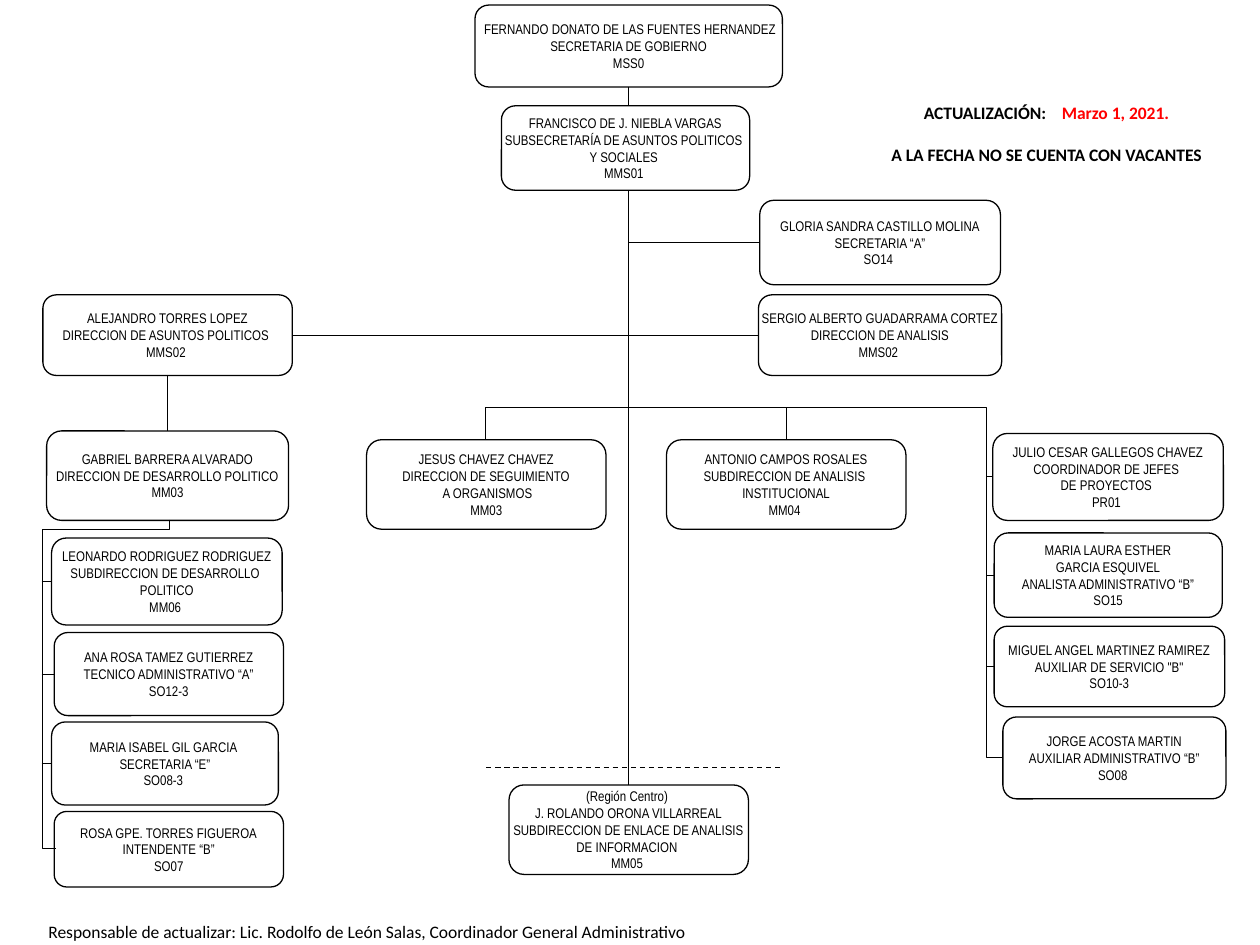
from lxml.etree import SubElement
from pptx import Presentation
from pptx.dml.color import RGBColor
from pptx.enum.dml import MSO_LINE
from pptx.enum.shapes import MSO_CONNECTOR, MSO_SHAPE
from pptx.enum.text import MSO_ANCHOR, PP_ALIGN
from pptx.oxml.ns import qn
from pptx.util import Inches, Pt

BLACK, WHITE, RED = "000000", "FFFFFF", "FF0000"
TOP, LEFT, BOTTOM, RIGHT = range(4)
ROUND, ALTERNATE = MSO_SHAPE.ROUNDED_RECTANGLE, MSO_SHAPE.FLOWCHART_ALTERNATE_PROCESS

# Posts: key, (left, top, width, height), lines of text
POSTS = [
    ("secretaria", (3.77, 0.04, 2.44, 0.65),
     [" FERNANDO DONATO DE LAS FUENTES HERNANDEZ", "SECRETARIA DE GOBIERNO", "MSS0"]),
    ("subsecretaria", (3.98, 0.84, 1.97, 0.67),
     ["FRANCISCO DE J. NIEBLA VARGAS", "SUBSECRETARÍA DE ASUNTOS POLITICOS ",
      "Y SOCIALES ", "MMS01 "]),
    ("gloria", (6.03, 1.59, 1.91, 0.67),
     ["GLORIA SANDRA CASTILLO MOLINA", "SECRETARIA “A”", "SO14 "]),
    ("politicos", (0.34, 2.34, 1.98, 0.64),
     ["ALEJANDRO TORRES LOPEZ", "DIRECCION DE ASUNTOS POLITICOS ", "MMS02 "]),
    ("analisis", (6.02, 2.34, 1.93, 0.64),
     ["SERGIO ALBERTO GUADARRAMA CORTEZ", "DIRECCION DE ANALISIS", "MMS02 "]),
    ("desarrollo", (0.37, 3.42, 1.92, 0.71),
     ["GABRIEL BARRERA ALVARADO", "DIRECCION DE DESARROLLO POLITICO", "MM03"]),
    ("leonardo", (0.41, 4.27, 1.83, 0.69),
     ["LEONARDO RODRIGUEZ RODRIGUEZ", "SUBDIRECCION DE DESARROLLO ", "POLITICO", "MM06 "]),
    ("ana", (0.43, 5.02, 1.82, 0.66),
     ["ANA ROSA TAMEZ GUTIERREZ", "TECNICO ADMINISTRATIVO “A”", "SO12-3"]),
    ("isabel", (0.41, 5.73, 1.8, 0.66),
     ["MARIA ISABEL GIL GARCIA ", "SECRETARIA “E”", "SO08-3 "]),
    ("rosa", (0.43, 6.44, 1.82, 0.6),
     ["ROSA GPE. TORRES FIGUEROA", "INTENDENTE “B”", "SO07"]),
    ("seguimiento", (2.91, 3.49, 1.9, 0.71),
     ["JESUS CHAVEZ CHAVEZ", "DIRECCION DE SEGUIMIENTO", " A ORGANISMOS", "MM03"]),
    ("institucional", (5.29, 3.49, 1.9, 0.71),
     ["ANTONIO CAMPOS ROSALES", "SUBDIRECCION DE ANALISIS ", "INSTITUCIONAL", "MM04 "]),
    ("julio", (7.88, 3.44, 1.83, 0.69),
     ["JULIO CESAR GALLEGOS CHAVEZ", "COORDINADOR DE JEFES ", "DE PROYECTOS ", "PR01 "]),
    ("laura", (7.89, 4.23, 1.81, 0.67),
     ["MARIA LAURA ESTHER", "GARCIA ESQUIVEL", "ANALISTA ADMINISTRATIVO “B”", "SO15"]),
    ("miguel", (7.89, 4.97, 1.83, 0.64),
     ["MIGUEL ANGEL MARTINEZ RAMIREZ", "AUXILIAR DE SERVICIO \"B\"", "SO10-3"]),
    ("jorge", (7.96, 5.69, 1.77, 0.65),
     ["JORGE ACOSTA MARTIN", "AUXILIAR ADMINISTRATIVO “B”", "SO08 "]),
    ("enlace", (4.04, 6.23, 1.9, 0.71),
     ["(Región Centro) ", "J. ROLANDO ORONA VILLARREAL",
      "SUBDIRECCION DE ENLACE DE ANALISIS", "DE INFORMACION ", "MM05 "]),
]
ALTERNATES = {"institucional", "jorge"}

# Lines from a rail to the middle of a post's left side: rail x, posts
TRUNK_X = 4.99
RAILS = [(TRUNK_X, ["gloria"]),
         (0.33, ["leonardo", "ana", "isabel"]),
         (7.83, ["julio", "laura", "miguel"])]

# Elbow rails: (left, top, width, height), rotation, flipped, bends
ELBOWS = [((-0.41, 4.98, 2.61, 0.9), 90, False, (0.028, 1.122)),
          ((4.64, 2.7, 2.53, 4.1), 270, True, (-0.099, 0.97))]

# Notes: (left, top, width, height), paragraphs of (text, colour, bold, letter spacing)
NOTES = [
    ((6.59, 0.76, 3.43, 0.61),
     [[("ACTUALIZACIÓN:", BLACK, True, 0), (" ", BLACK, True, 6.75),
       ("Marzo 1, 2021.", RED, True, 0)],
      [("A LA FECHA NO SE CUENTA CON VACANTES", BLACK, True, 0)]]),
    ((-0.2, 7.26, 6.22, 0.27),
     [[("Responsable de actualizar: Lic. Rodolfo de León Salas, "
        "Coordinador General Administrativo", BLACK, False, 0)]]),
]


def rgb(color):
    return RGBColor.from_string(color)


def add_run(p, text, color=BLACK, **font):
    r = p.add_run()
    r.text = text
    r.font.color.rgb = rgb(color)
    for name, value in font.items():
        setattr(r.font, name, value)
    return r


def paragraphs(tf, count):
    for i in range(count):
        p = tf.add_paragraph() if i else tf.paragraphs[0]
        p.alignment = PP_ALIGN.CENTER
        yield p


def add_post(s, kind, box, lines):
    sp = s.shapes.add_shape(kind, *map(Inches, box))
    sp.shadow.inherit = False
    sp.fill.solid()
    sp.fill.fore_color.rgb = rgb(WHITE)
    sp.line.color.rgb = rgb(BLACK)
    sp.line.width = Pt(0.75)
    tf = sp.text_frame
    tf.word_wrap = False
    tf.vertical_anchor = MSO_ANCHOR.MIDDLE
    for p, text in zip(paragraphs(tf, len(lines)), lines):
        add_run(p, text, name="Arial Narrow", size=Pt(8))
    return sp


def add_line(s, start, end, kind=MSO_CONNECTOR.STRAIGHT, width=0.5):
    c = s.shapes.add_connector(kind, *map(Inches, start + end))
    c.line.color.rgb = rgb(BLACK)
    c.line.width = Pt(width)
    SubElement(c.element.spPr, qn("a:effectLst"))
    return c


def join(s, first, side1, second, side2):
    c = add_line(s, (0, 0), (1, 1))
    c.begin_connect(first, side1)
    c.end_connect(second, side2)


def add_elbow(s, box, rotation, flipped, bends):
    x, y, w, h = box
    c = add_line(s, (x, y), (x + w, y + h), MSO_CONNECTOR.ELBOW)
    xfrm = c.element.spPr.find(qn("a:xfrm"))
    xfrm.set("rot", str(rotation * 60000))
    if flipped:
        xfrm.set("flipH", "1")
    geom = c.element.spPr.find(qn("a:prstGeom"))
    geom.set("prst", "bentConnector4")
    guides = geom.find(qn("a:avLst"))
    for i, bend in enumerate(bends, 1):
        SubElement(guides, qn("a:gd"), name=f"adj{i}", fmla=f"val {round(bend * 100000)}")


def main():
    prs = Presentation()
    prs.slide_width, prs.slide_height = Inches(10), Inches(7.5)
    s = prs.slides.add_slide(prs.slide_layouts[6])

    # Posts
    boxes = {key: box for key, box, _ in POSTS}
    posts = {key: add_post(s, ALTERNATE if key in ALTERNATES else ROUND, box, lines)
             for key, box, lines in POSTS}

    # Trunk, above and below the undersecretary
    _, top, _, height = boxes["subsecretaria"]
    c = add_line(s, (TRUNK_X, 0.69), (TRUNK_X, top))
    c.begin_connect(posts["secretaria"], BOTTOM)
    c = add_line(s, (TRUNK_X, top + height), (TRUNK_X, 6.23))
    c.end_connect(posts["enlace"], TOP)

    # Links between posts and from the rails
    join(s, posts["politicos"], RIGHT, posts["analisis"], LEFT)
    join(s, posts["politicos"], BOTTOM, posts["desarrollo"], TOP)
    for rail_x, keys in RAILS:
        for key in keys:
            x, y, _, h = boxes[key]
            c = add_line(s, (rail_x, y + h / 2), (x, y + h / 2))
            c.end_connect(posts[key], LEFT)
    c = add_line(s, (6.24, 3.24), (6.24, 3.49))
    c.end_connect(posts["institucional"], TOP)
    for elbow in ELBOWS:
        add_elbow(s, *elbow)

    # Regional boundary
    add_line(s, (3.86, 6.09), (6.22, 6.09), width=0.75).line.dash_style = MSO_LINE.DASH

    # Notes
    for box, content in NOTES:
        tf = s.shapes.add_textbox(*map(Inches, box)).text_frame
        tf.word_wrap = True
        for i, (p, runs) in enumerate(zip(paragraphs(tf, len(content)), content)):
            if i:
                p.space_before = Pt(12)
            for text, color, bold, spacing in runs:
                r = add_run(p, text, color, name="Calibri", size=Pt(10), bold=bold)
                if spacing:
                    r.font._element.set("spc", str(round(spacing * 100)))

    prs.save("out.pptx")


if __name__ == "__main__":
    main()
